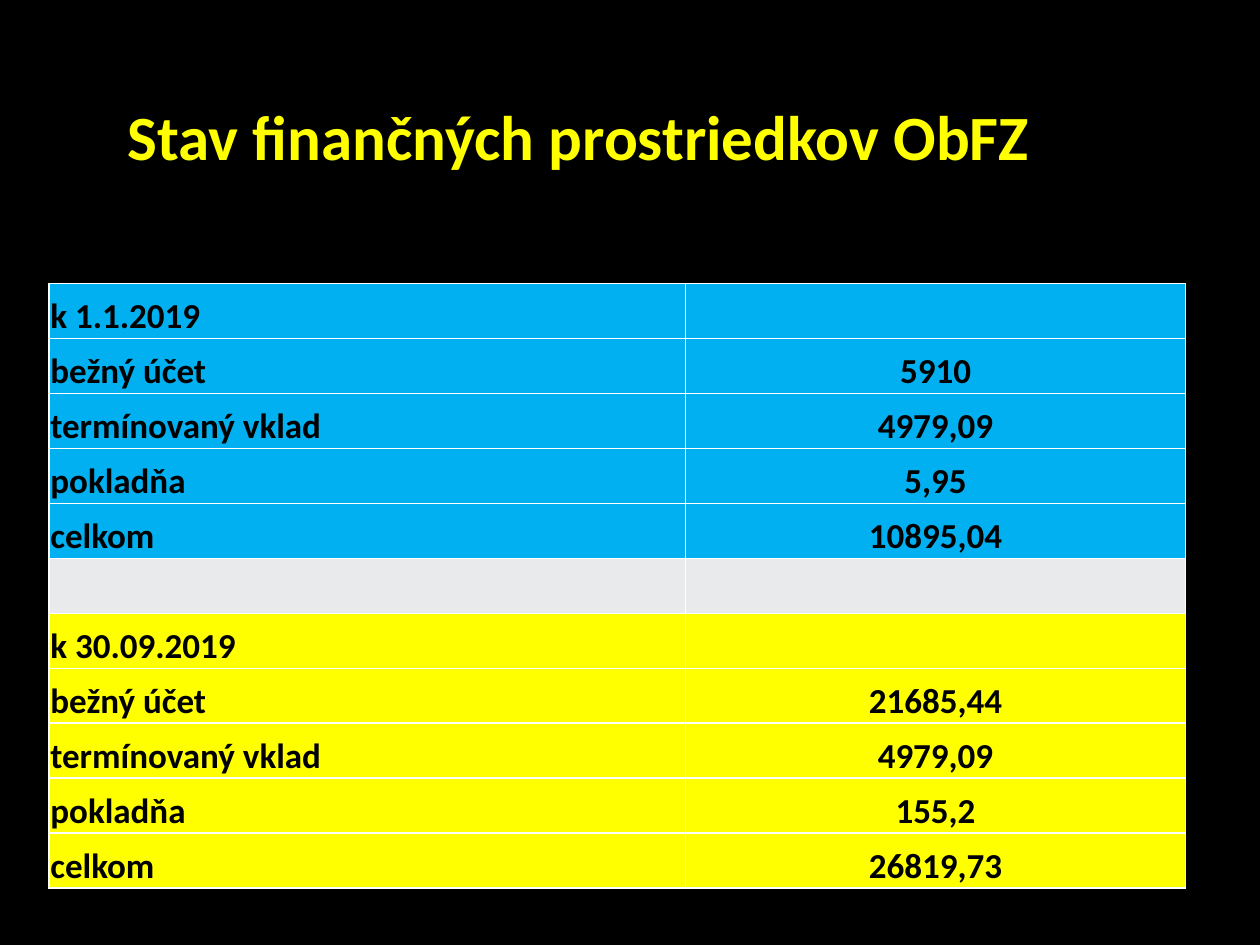
from lxml.etree import SubElement
from pptx import Presentation
from pptx.dml.color import RGBColor
from pptx.enum.text import MSO_ANCHOR as Anchor, PP_ALIGN as Align
from pptx.oxml.ns import qn
from pptx.util import Inches, Pt

BLACK, WHITE, GREY, BLUE, YELLOW = "000000", "FFFFFF", "E9EAEC", "00B0F0", "FFFF00"
LABELS = ["bežný účet", "termínovaný vklad", "pokladňa", "celkom"]
BALANCES = [
    ("k 1.1.2019", BLUE, ["5910", "4979,09", "5,95", "10895,04"]),
    ("k 30.09.2019", YELLOW, ["21685,44", "4979,09", "155,2", "26819,73"]),
]


def color(value):
    return RGBColor.from_string(value)


def write(paragraph, text, size, text_color, align):
    paragraph.text = text
    paragraph.alignment = align
    for run in paragraph.runs:
        font = run.font
        font.name, font.size, font.bold = "Calibri", Pt(size), True
        font.color.rgb = color(text_color)


def set_borders(cell, line_color, width):
    properties = cell._tc.get_or_add_tcPr()
    for position, side in enumerate(("lnL", "lnR", "lnT", "lnB")):
        line = properties.makeelement(qn(f"a:{side}"), {"w": str(Pt(width))})
        fill = SubElement(line, qn("a:solidFill"))
        SubElement(fill, qn("a:srgbClr"), val=line_color)
        properties.insert(position, line)


def add_title(slide, left, top, width, height, text):
    text_frame = slide.shapes.add_textbox(left, top, width, height).text_frame
    text_frame.word_wrap = True
    text_frame.vertical_anchor = Anchor.BOTTOM
    paragraph = text_frame.paragraphs[0]
    write(paragraph, text, 36, YELLOW, Align.CENTER)
    paragraph.space_before = Pt(4)


def balance_rows():
    """List (label, amount, fill) rows, with a grey row between the dates."""
    rows = []
    for date, fill, amounts in BALANCES:
        if rows:
            rows.append(("", "", GREY))
        rows.append((date, "", fill))
        rows += [(label, amount, fill) for label, amount in zip(LABELS, amounts)]
    return rows


def add_balance_table(slide, left, top, width, height):
    rows = balance_rows()
    table = slide.shapes.add_table(len(rows), 2, left, top, width, height).table
    # Label column takes 56 % of the width
    table.columns[0].width = int(width * 0.56)
    table.columns[1].width = width - table.columns[0].width

    for row, (label, amount, fill) in enumerate(rows):
        for column, (text, align) in enumerate([(label, Align.LEFT), (amount, Align.CENTER)]):
            cell = table.cell(row, column)
            cell.margin_left = cell.margin_right = cell.margin_top = Inches(0.01)
            cell.margin_bottom = 0
            cell.vertical_anchor = Anchor.BOTTOM
            cell.fill.solid()
            cell.fill.fore_color.rgb = color(fill)
            set_borders(cell, WHITE, 1)
            write(cell.text_frame.paragraphs[0], text, 20, BLACK, align)


def main():
    presentation = Presentation()
    presentation.slide_width, presentation.slide_height = Inches(10), Inches(7.5)
    slide = presentation.slides.add_slide(presentation.slide_layouts[6])
    slide.background.fill.solid()
    slide.background.fill.fore_color.rgb = color(BLACK)

    # Title and table share the left margin
    margin = Inches(0.39)
    add_title(slide, margin, Inches(0.25), Inches(8.4), Inches(1.17),
              "Stav finančných prostriedkov ObFZ")
    add_balance_table(slide, margin, Inches(2.25), Inches(9.02), Inches(4.8))
    presentation.save("out.pptx")


if __name__ == "__main__":
    main()
